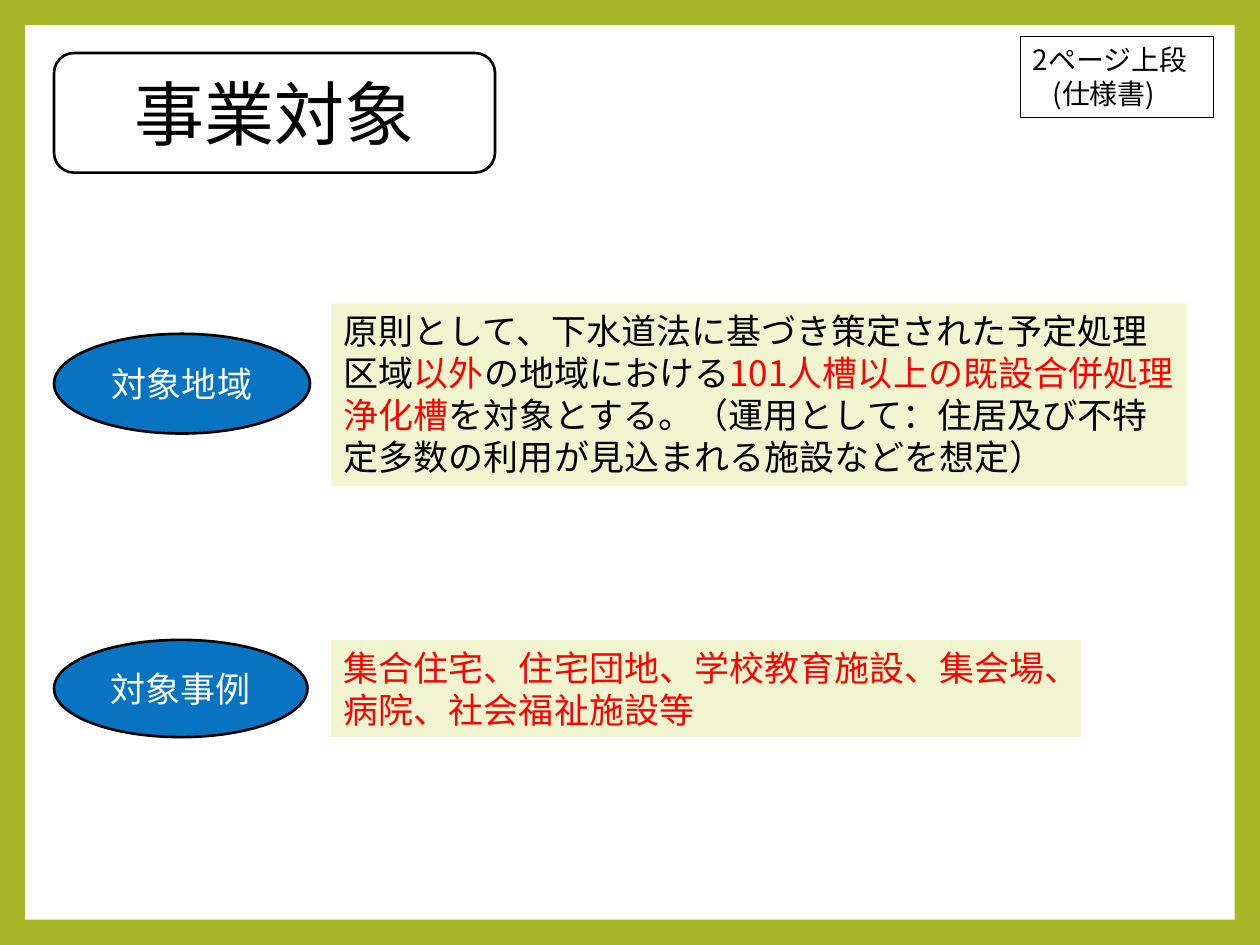
from dataclasses import dataclass

import pptx
import pptx.dml.color
import pptx.enum.shapes
import pptx.enum.text
import pptx.oxml.ns
import pptx.util
from lxml import etree
from pptx.util import Cm

FONT = "Noto Sans CJK JP"
COLORS = {
    "border": "A6B727",
    "white": "FFFFFF",
    "black": "000000",
    "red": "FF0000",
    "blue": "0070C0",
    "pale": "F0F5D0",
}
SHAPES = pptx.enum.shapes.MSO_SHAPE
ANCHORS = pptx.enum.text.MSO_ANCHOR
ALIGNMENTS = pptx.enum.text.PP_ALIGN


@dataclass
class Text:
    """Paragraphs, each a list of (words, color name) runs."""
    paragraphs: list[list[tuple[str, str]]]
    size: int
    centered: bool = False


@dataclass
class Topic:
    label: str
    oval_top: float
    oval_width: float
    oval_height: float
    box_top: float
    box_width: float
    box_height: float
    runs: list[tuple[str, str]]


TOPICS = [
    Topic("対象地域", 6.73, 5.16, 2.01, 6.12, 17.25, 3.68, [
        ("原則として、下水道法に基づき策定された予定処理区域", "black"),
        ("以外", "red"),
        ("の地域における", "black"),
        ("101人槽以上の既設合併処理浄化槽", "red"),
        ("を対象とする。（運用として：住居及び不特定多数の利用が見込まれる施設などを想定）", "black"),
    ]),
    Topic("対象事例", 12.9, 5.11, 1.96, 12.9, 15.11, 1.96, [
        ("集合住宅、住宅団地、学校教育施設、集会場、病院、社会福祉施設等", "red"),
    ]),
]


def rgb(name: str) -> pptx.dml.color.RGBColor:
    return pptx.dml.color.RGBColor.from_string(COLORS[name])


def write_text(shape, text: Text) -> None:
    frame = shape.text_frame
    frame.word_wrap = True
    frame.vertical_anchor = ANCHORS.MIDDLE if text.centered else ANCHORS.TOP
    for index, runs in enumerate(text.paragraphs):
        paragraph = frame.add_paragraph() if index else frame.paragraphs[0]
        paragraph.alignment = ALIGNMENTS.CENTER if text.centered else ALIGNMENTS.LEFT
        paragraph.line_spacing = pptx.util.Pt(round(text.size * 1.2, 1))
        paragraph.font.size = pptx.util.Pt(text.size)
        paragraph.font.name = FONT
        # East Asian typeface
        defaults = paragraph._p.pPr.find(pptx.oxml.ns.qn("a:defRPr"))
        etree.SubElement(defaults, pptx.oxml.ns.qn("a:ea"), typeface=FONT)
        for words, color in runs:
            run = paragraph.add_run()
            run.text = words
            run.font.color.rgb = rgb(color)


def add_box(slide, kind, left: float, top: float, width: float, height: float,
            fill: str | None = None, line_width: float = 0, text: Text | None = None):
    shape = slide.shapes.add_shape(kind, Cm(left), Cm(top), Cm(width), Cm(height))
    shape.shadow.inherit = False
    if fill:
        shape.fill.solid()
        shape.fill.fore_color.rgb = rgb(fill)
    else:
        shape.fill.background()
    if line_width:
        shape.line.color.rgb = rgb("black")
        shape.line.width = pptx.util.Pt(line_width)
    else:
        shape.line.fill.background()
    if text:
        write_text(shape, text)
    return shape


def set_opacity(shape, percent: int) -> None:
    color = shape._element.spPr.find(
        f"{pptx.oxml.ns.qn('a:solidFill')}/{pptx.oxml.ns.qn('a:srgbClr')}")
    etree.SubElement(color, pptx.oxml.ns.qn("a:alpha"), val=str(percent * 1000))


def add_topic(slide, topic: Topic) -> None:
    oval = add_box(slide, SHAPES.OVAL, 1.09, topic.oval_top, topic.oval_width,
                   topic.oval_height, "blue", 1.5,
                   Text([[(topic.label, "white")]], 20, centered=True))
    set_opacity(oval, 97)
    add_box(slide, SHAPES.RECTANGLE, 6.68, topic.box_top, topic.box_width,
            topic.box_height, "pale", text=Text([topic.runs], 20))


def main() -> None:
    presentation = pptx.Presentation()
    presentation.slide_width, presentation.slide_height = Cm(25.4), Cm(19.05)
    slide = presentation.slides.add_slide(presentation.slide_layouts[6])

    # Green border around a white page
    slide.background.fill.solid()
    slide.background.fill.fore_color.rgb = rgb("border")
    add_box(slide, SHAPES.RECTANGLE, 0.51, 0.51, 24.38, 18.03, "white")

    # Title
    add_box(slide, SHAPES.ROUNDED_RECTANGLE, 1.09, 1.07, 8.89, 2.41, line_width=1.5,
            text=Text([[("事業対象", "black")]], 40, centered=True))

    # Topics
    for topic in TOPICS:
        add_topic(slide, topic)

    # Page reference, second line indented
    reference = add_box(slide, SHAPES.RECTANGLE, 20.57, 0.74, 3.89, 1.63, line_width=0.75,
                        text=Text([[("2ページ上段", "black")], [("(仕様書)", "black")]], 16))
    reference.text_frame.paragraphs[1]._p.pPr.set("marL", str(Cm(0.4)))

    presentation.save("out.pptx")


if __name__ == "__main__":
    main()
